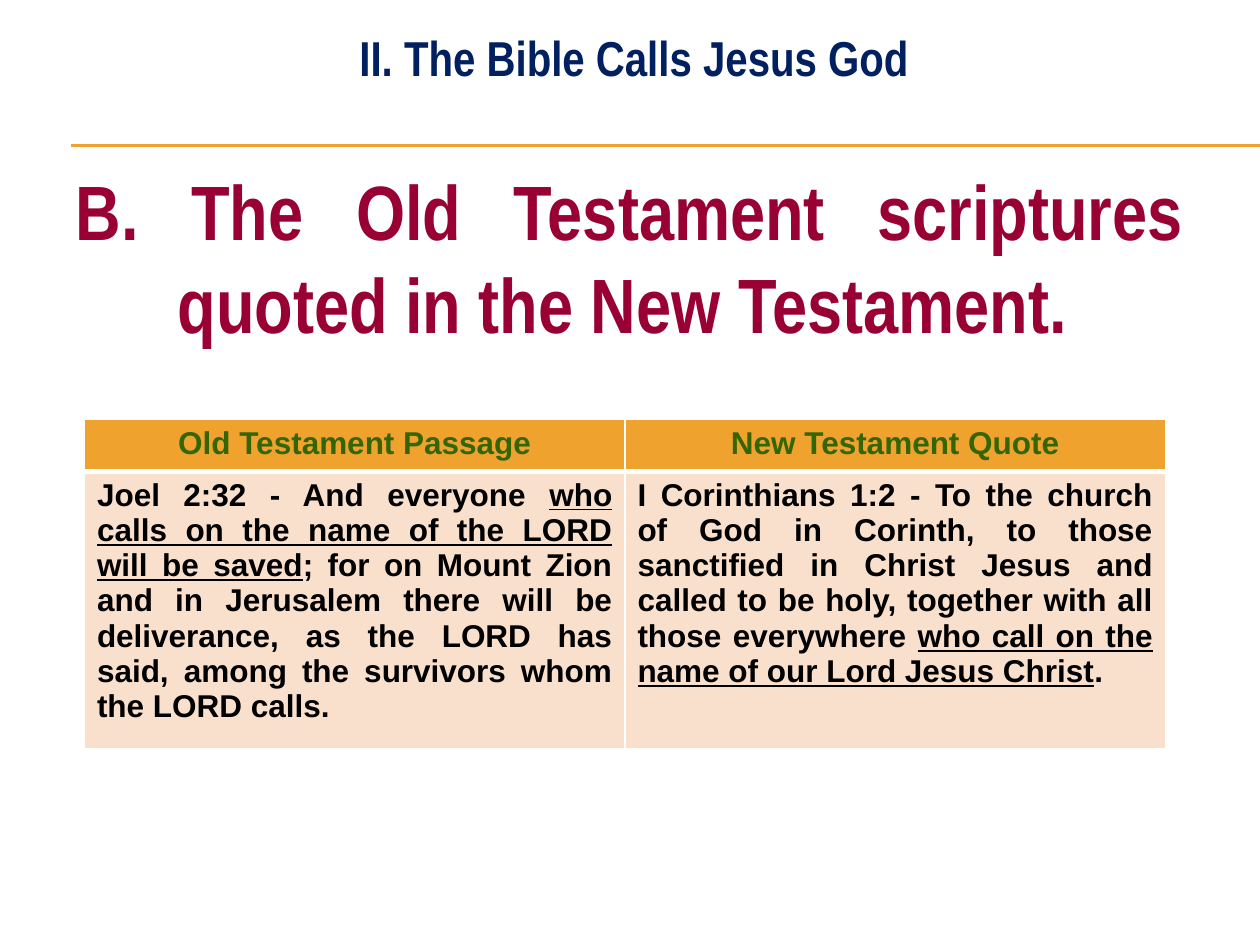
from lxml.etree import SubElement
from pptx import Presentation
from pptx.dml.color import RGBColor
from pptx.enum.shapes import MSO_CONNECTOR as Connector
from pptx.enum.text import MSO_ANCHOR as Anchor, MSO_AUTO_SIZE as AutoSize, PP_ALIGN as Align
from pptx.oxml.ns import qn
from pptx.util import Inches, Pt

COLORS = {"navy": "002060", "crimson": "990033", "gold": "F0A22E", "green": "336600",
          "peach": "F9E0CD", "black": "000000", "white": "FFFFFF"}

TITLE = "II. The Bible Calls Jesus God"
POINT = "B. The Old Testament scriptures quoted in the New Testament."
HEADERS = ["Old Testament Passage", "New Testament Quote"]
PASSAGES = [
    [("Joel 2:32 - And everyone ", False),
     ("who calls on the name of the LORD will be saved", True),
     ("; for on Mount Zion and in Jerusalem there will be deliverance, as the LORD has said, "
      "among the survivors whom the LORD calls.", False)],
    [("I Corinthians 1:2 - To the church of God in Corinth, to those sanctified in Christ Jesus "
      "and called to be holy, together with all those everywhere ", False),
     ("who call on the name of our Lord Jesus Christ", True),
     (".", False)],
]

TITLE_BOX = (0.74, 0.17, 8.58, 0.57)
BODY_BOX = (0.5, 1.25, 9, 6.25)
TABLE_BOX = (0.67, 3.33, 8.58, 2.61)
ROW_HEIGHTS = (0.41, 2.2)
RULE_LEFT, RULE_RIGHT, RULE_TOPS = 0.56, 10, (1.15, 1.16)
HANGING = 0.81

TITLE_FONT = {"name": "Arial Narrow", "size": Pt(28), "bold": True}
POINT_FONT = {"name": "Arial Narrow", "size": Pt(44), "bold": True}
TABLE_FONT = {"name": "Arial", "size": Pt(18), "bold": True}
FRAME = {"auto_size": AutoSize.NONE, "word_wrap": True, "vertical_anchor": Anchor.TOP}
MARGINS = {"margin_left": Inches(0.1), "margin_right": Inches(0.1),
           "margin_top": Inches(0.05), "margin_bottom": Inches(0.05)}


def rgb(name):
    return RGBColor.from_string(COLORS[name])


def apply(target, values):
    for name, value in values.items():
        setattr(target, name, value)


def write(para, spans, font, color, align):
    para.alignment = align
    para.space_before = Pt(0)
    for text, underline in spans:
        span = para.add_run()
        span.text = text
        apply(span.font, {**font, "underline": underline})
        span.font.color.rgb = rgb(color)


def fill_placeholder(box, place, text, font, color, align):
    apply(box, dict(zip(("left", "top", "width", "height"), map(Inches, place))))
    apply(box.text_frame, {**FRAME, **MARGINS})
    para = box.text_frame.paragraphs[0]
    write(para, [(text, False)], font, color, align)
    return para


def hang(para, indent):
    properties = para._p.get_or_add_pPr()
    properties.set("marL", str(Inches(indent)))
    properties.set("indent", str(-Inches(indent)))
    SubElement(properties, qn("a:buNone"))


def add_rule(page, top):
    rule = page.shapes.add_connector(
        Connector.STRAIGHT, *map(Inches, (RULE_LEFT, top, RULE_RIGHT, top)))
    rule.line.color.rgb = rgb("gold")
    rule.line.width = Pt(0.75)
    SubElement(rule._element.spPr, qn("a:effectLst"))


def style_cell(cell, spans, fill, color, align, thick_side):
    apply(cell, MARGINS)
    properties = cell._tc.get_or_add_tcPr()
    for side in "LRTB":
        width = Pt(3 if side == thick_side else 1)
        border = SubElement(properties, qn(f"a:ln{side}"), w=str(width))
        solid = SubElement(border, qn("a:solidFill"))
        SubElement(solid, qn("a:srgbClr"), val=COLORS["white"])
    cell.fill.solid()
    cell.fill.fore_color.rgb = rgb(fill)
    write(cell.text_frame.paragraphs[0], spans, TABLE_FONT, color, align)


def add_passages(page):
    table = page.shapes.add_table(2, len(HEADERS), *map(Inches, TABLE_BOX)).table
    for row, height in zip(table.rows, ROW_HEIGHTS):
        row.height = Inches(height)
    for column, (header, passage) in enumerate(zip(HEADERS, PASSAGES)):
        style_cell(table.cell(0, column), [(header, False)], "gold", "green", Align.CENTER, "B")
        style_cell(table.cell(1, column), passage, "peach", "black", Align.JUSTIFY, "T")


def main():
    """Build the slide that pairs an Old Testament passage with its New Testament quote."""
    deck = Presentation()
    deck.slide_width, deck.slide_height = Inches(10), Inches(7.5)
    page = deck.slides.add_slide(deck.slide_layouts[1])
    for top in RULE_TOPS:
        add_rule(page, top)
    title, body = page.placeholders
    fill_placeholder(title, TITLE_BOX, TITLE, TITLE_FONT, "navy", Align.CENTER)
    point = fill_placeholder(body, BODY_BOX, POINT, POINT_FONT, "crimson", Align.JUSTIFY)
    hang(point, HANGING)
    add_passages(page)
    deck.save("out.pptx")


if __name__ == "__main__":
    main()
